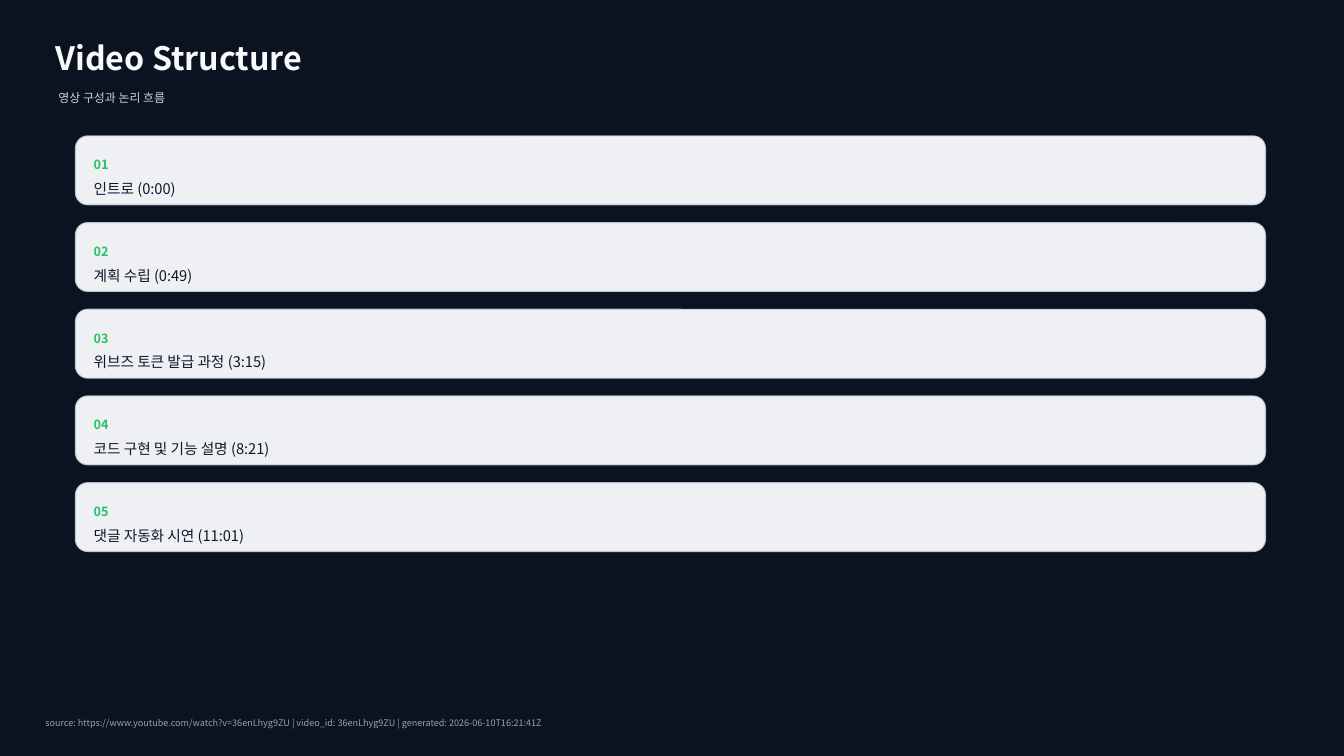
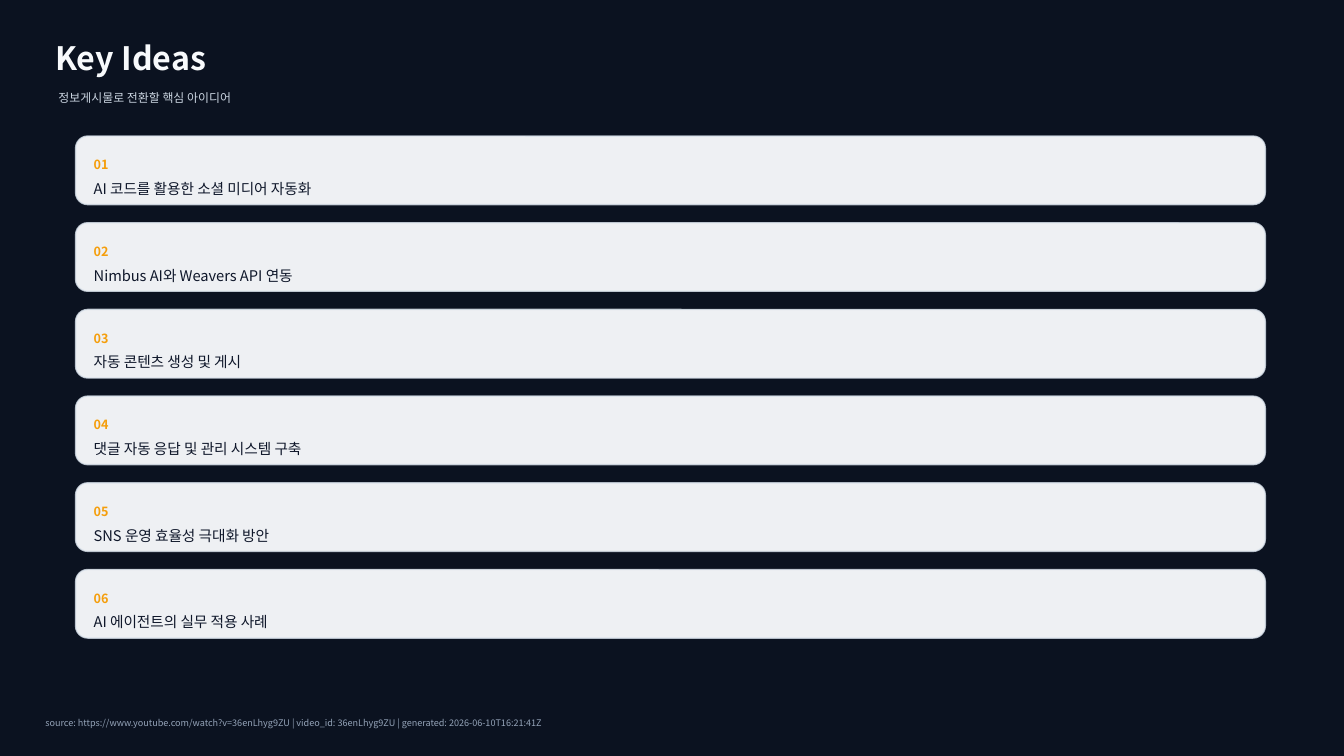
"""Build two slides of numbered cards on a dark background."""
from lxml import etree
from pptx import Presentation
from pptx.dml.color import RGBColor
from pptx.enum.shapes import MSO_SHAPE
from pptx.enum.text import MSO_ANCHOR
from pptx.oxml.ns import qn
from pptx.util import Inches, Pt

FONT = "Noto Sans CJK KR"
COLORS = {
    "background": "0B1220",
    "title": "F8FAFC",
    "subtitle": "CBD5E1",
    "card": "F8FAFC",
    "border": "D7E0EA",
    "body": "0F172A",
    "footer": "94A3B8",
    "green": "22C55E",
    "amber": "F59E0B",
}
FOOTER = ("source: https://www.youtube.com/watch?v=36enLhyg9ZU | "
          "video_id: 36enLhyg9ZU | generated: 2026-06-10T16:21:41Z")
SLIDES = [
    {
        "title": "Video Structure",
        "subtitle": "영상 구성과 논리 흐름",
        "accent": "green",
        "items": [
            "인트로 (0:00)",
            "계획 수립 (0:49)",
            "위브즈 토큰 발급 과정 (3:15)",
            "코드 구현 및 기능 설명 (8:21)",
            "댓글 자동화 시연 (11:01)",
        ],
    },
    {
        "title": "Key Ideas",
        "subtitle": "정보게시물로 전환할 핵심 아이디어",
        "accent": "amber",
        "items": [
            "AI 코드를 활용한 소셜 미디어 자동화",
            "Nimbus AI와 Weavers API 연동",
            "자동 콘텐츠 생성 및 게시",
            "댓글 자동 응답 및 관리 시스템 구축",
            "SNS 운영 효율성 극대화 방안",
            "AI 에이전트의 실무 적용 사례",
        ],
    },
]

CARD_LEFT, CARD_TOP, CARD_WIDTH, CARD_HEIGHT = 0.75, 1.35, 11.8, 0.68
CARD_GAP, CARD_PADDING, CARD_RADIUS = 0.18, 0.18, 0.12


def rgb(name):
    """Return the named colour."""
    return RGBColor.from_string(COLORS[name])


def add_text(s, text, left, top, width, height, size, color, bold=False):
    """Add one line of text, centred vertically in its box."""
    box = s.shapes.add_textbox(Inches(left), Inches(top), Inches(width), Inches(height))
    tf = box.text_frame
    tf.word_wrap = True
    tf.vertical_anchor = MSO_ANCHOR.MIDDLE
    tf.margin_left = tf.margin_top = tf.margin_right = tf.margin_bottom = 0
    r = tf.paragraphs[0].add_run()
    r.text = text
    r.font.size, r.font.bold, r.font.name = Pt(size), bold, FONT
    r.font.color.rgb = rgb(color)
    etree.SubElement(r.font._element, qn("a:ea"), typeface=FONT)


def set_opacity(fill_parent, percent):
    """Set the opacity of a solid fill."""
    color = fill_parent.find(qn("a:solidFill"))[0]
    etree.SubElement(color, qn("a:alpha"), val=str(percent * 1000))


def add_card(s, index, text, accent):
    """Add a numbered card in its row."""
    top = CARD_TOP + index * (CARD_HEIGHT + CARD_GAP)
    card = s.shapes.add_shape(MSO_SHAPE.ROUNDED_RECTANGLE, Inches(CARD_LEFT), Inches(top),
                              Inches(CARD_WIDTH), Inches(CARD_HEIGHT))
    card.adjustments[0] = CARD_RADIUS / CARD_HEIGHT
    card.shadow.inherit = False
    card.fill.solid()
    card.fill.fore_color.rgb = rgb("card")
    card.line.color.rgb = rgb("border")
    card.line.width = Pt(1)
    sp_pr = card._element.spPr
    set_opacity(sp_pr, 96)
    set_opacity(sp_pr.find(qn("a:ln")), 80)
    left, width = CARD_LEFT + CARD_PADDING, CARD_WIDTH - 2 * CARD_PADDING
    add_text(s, f"{index + 1:02}", left, top + 0.16, width, 0.25, size=9, color=accent, bold=True)
    add_text(s, text, left, top + 0.39, width, 0.26, size=10.5, color="body")


def add_slide(prs, content):
    """Add a slide with its heading, cards and footer."""
    s = prs.slides.add_slide(prs.slide_layouts[6])
    add_text(s, content["title"], 0.55, 0.35, 12, 0.45, size=23, color="title", bold=True)
    add_text(s, content["subtitle"], 0.58, 0.83, 11.5, 0.28, size=8.5, color="subtitle")
    for index, text in enumerate(content["items"]):
        add_card(s, index, text, content["accent"])
    add_text(s, FOOTER, 0.45, 7.05, 12.4, 0.25, size=6.5, color="footer")


def main():
    """Build and save the presentation."""
    prs = Presentation()
    prs.slide_width, prs.slide_height = Inches(13.33), Inches(7.5)
    background = prs.slide_master.background.fill
    background.solid()
    background.fore_color.rgb = rgb("background")
    for content in SLIDES:
        add_slide(prs, content)
    prs.save("out.pptx")


if __name__ == "__main__":
    main()
